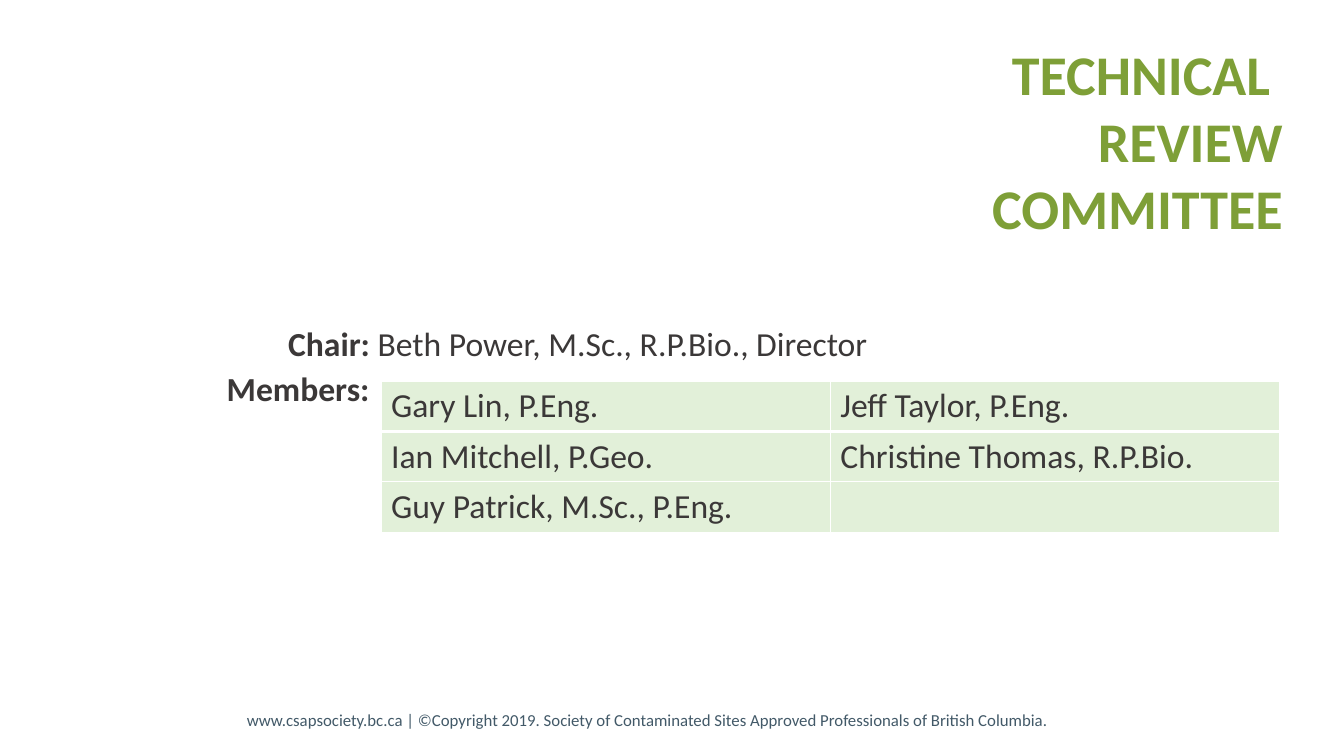
from dataclasses import dataclass

from lxml import etree
from pptx import Presentation
from pptx import util as u
from pptx.dml.color import RGBColor
from pptx.enum import text
from pptx.oxml import ns


@dataclass(frozen=True)
class Theme:
    font: str = "Calibri"
    heading: str = "7E9F37"
    body: str = "3B3838"
    footer: str = "425968"
    cell: str = "E2F0D9"
    rule: str = "FFFFFF"
    heading_size: int = 40
    body_size: int = 24
    footer_size: int = 12
    thin: int = 1
    thick: int = 3


THEME = Theme()

MEMBERS = [
    ["Gary Lin, P.Eng.", "Jeff Taylor, P.Eng."],
    ["Ian Mitchell, P.Geo.", "Christine Thomas, R.P.Bio."],
    ["Guy Patrick, M.Sc., P.Eng.", ""],
]


def style(font, size, color, bold=False):
    font.name = THEME.font
    font.size = u.Pt(size)
    font.bold = bold
    font.color.rgb = RGBColor.from_string(color)


def add_text(slide, box, lines, size, color, bold=False, align=text.PP_ALIGN.LEFT, wrap=True):
    frame = slide.shapes.add_textbox(*map(u.Inches, box)).text_frame
    frame.word_wrap = wrap
    frame.text = "\n".join(lines)
    for paragraph in frame.paragraphs:
        paragraph.alignment = align
        for run in paragraph.runs:
            style(run.font, size, color, bold)
    return frame


def add_heading(slide, box):
    add_text(slide, box, ["TECHNICAL ", "REVIEW", "COMMITTEE"],
             THEME.heading_size, THEME.heading, True, text.PP_ALIGN.RIGHT)


def add_borders(cell, widths):
    properties = cell._tc.get_or_add_tcPr()
    for position, (side, width) in enumerate(widths.items()):
        line = etree.Element(ns.qn(f"a:ln{side}"), w=str(u.Pt(width)))
        fill = etree.SubElement(line, ns.qn("a:solidFill"))
        etree.SubElement(fill, ns.qn("a:srgbClr"), val=THEME.rule)
        properties.insert(position, line)


def add_members(slide, box):
    left, top, width, height = box
    table = slide.shapes.add_table(
        len(MEMBERS), len(MEMBERS[0]), *map(u.Inches, box)).table
    table.first_row = False
    table.horz_banding = False
    for row, names in enumerate(MEMBERS):
        table.rows[row].height = u.Inches(height / len(MEMBERS))
        for column, name in enumerate(names):
            cell = table.cell(row, column)
            cell.text = name
            cell.fill.solid()
            cell.fill.fore_color.rgb = RGBColor.from_string(THEME.cell)
            add_borders(cell, {
                "L": THEME.thin,
                "R": THEME.thin,
                "T": THEME.thick if row == 1 else THEME.thin,
                "B": THEME.thick if row == 0 else THEME.thin,
            })
            for run in cell.text_frame.paragraphs[0].runs:
                style(run.font, THEME.body_size, THEME.body)


def add_committee(slide, box):
    left, top, width, height = box
    label_width, line_height = 1.63, 0.5
    chair = add_text(slide, (left + 0.61, top, 8.46, line_height), ["Chair: "],
                     THEME.body_size, THEME.body, True)
    chair_name = chair.paragraphs[0].add_run()
    chair_name.text = "Beth Power, M.Sc., R.P.Bio., Director"
    style(chair_name.font, THEME.body_size, THEME.body)
    add_members(slide, (left + label_width, top + 0.63, width - label_width, height - 0.63))
    add_text(slide, (left, top + 0.45, label_width, line_height), ["Members:"],
             THEME.body_size, THEME.body, True, wrap=False)


def add_footer(slide, box):
    add_text(slide, box,
             ["www.csapsociety.bc.ca | ©Copyright 2019. Society of Contaminated Sites "
              "Approved Professionals of British Columbia."],
             THEME.footer_size, THEME.footer)


def main():
    deck = Presentation()
    deck.slide_width = u.Inches(13.33)
    deck.slide_height = u.Inches(7.5)
    slide = deck.slides.add_slide(deck.slide_layouts[6])
    add_heading(slide, (4.2, 0.34, 8.62, 2.12))
    add_committee(slide, (2.15, 3.15, 10.54, 2.13))
    add_footer(slide, (2.35, 6.99, 9.32, 0.51))
    deck.save("out.pptx")


if __name__ == "__main__":
    main()
